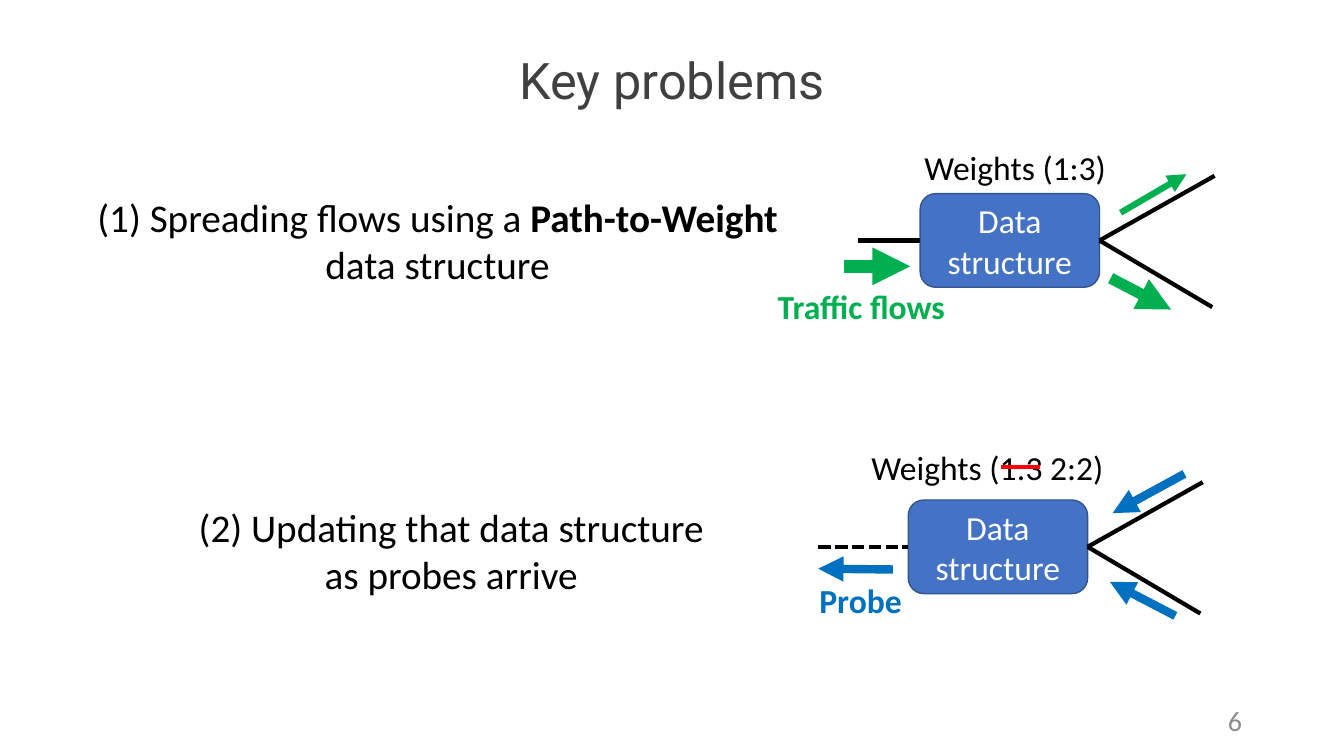
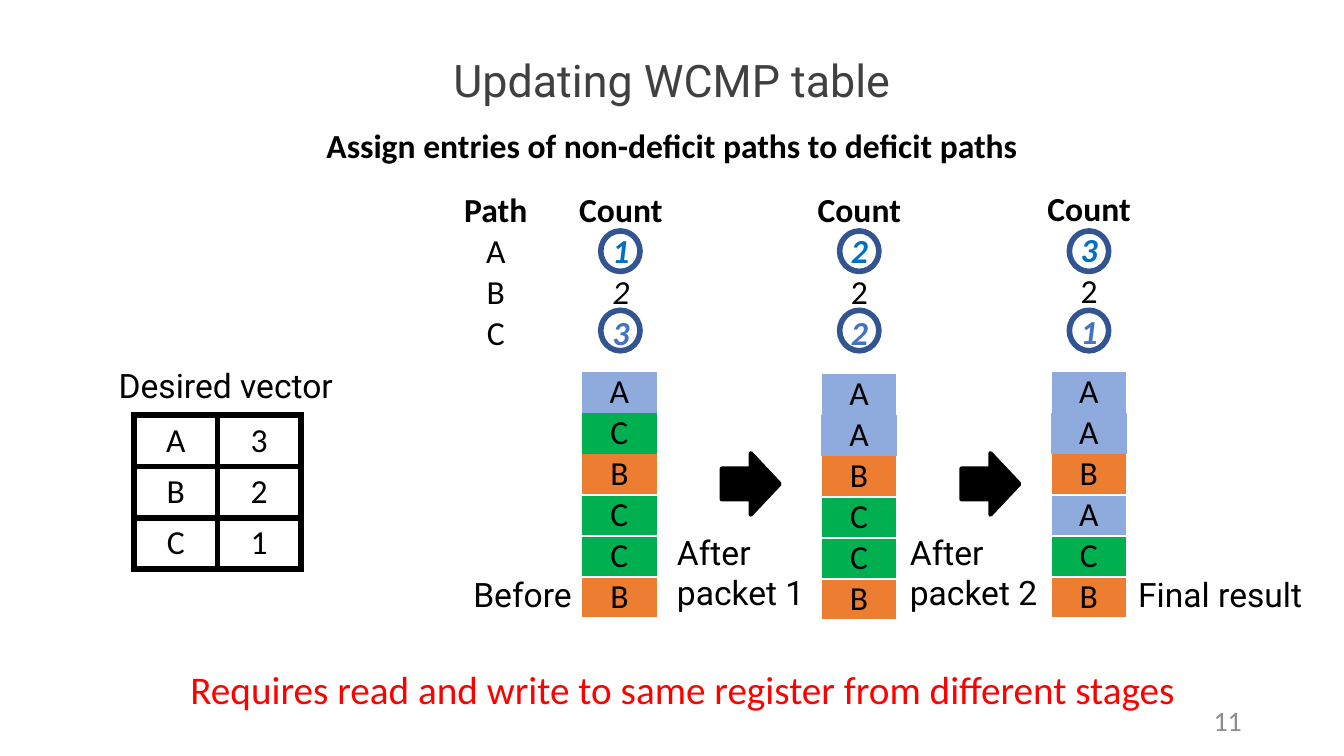
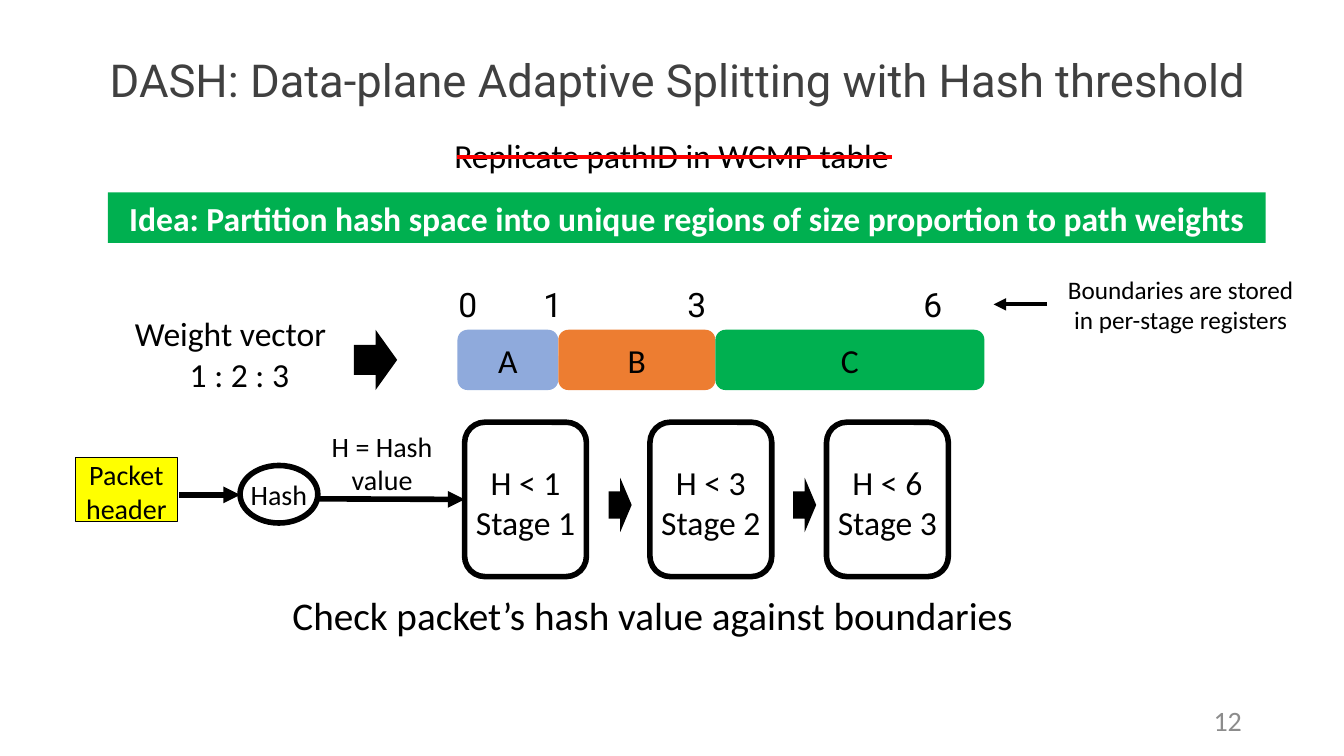
from dataclasses import dataclass

from lxml import etree
from pptx import Presentation
from pptx.dml.color import RGBColor
from pptx.enum.dml import MSO_LINE
from pptx.enum.shapes import MSO_CONNECTOR, MSO_SHAPE
from pptx.enum.text import MSO_ANCHOR, MSO_AUTO_SIZE, PP_ALIGN
from pptx.oxml.ns import qn
from pptx.util import Cm, Pt

LEFT, MID, RIGHT = PP_ALIGN.LEFT, PP_ALIGN.CENTER, PP_ALIGN.RIGHT
TOP, MIDDLE = MSO_ANCHOR.TOP, MSO_ANCHOR.MIDDLE
RECT, ROUND = MSO_SHAPE.RECTANGLE, MSO_SHAPE.ROUNDED_RECTANGLE
OVAL, ARROW = MSO_SHAPE.OVAL, MSO_SHAPE.RIGHT_ARROW
STRAIGHT, DASH = MSO_CONNECTOR.STRAIGHT, MSO_LINE.SQUARE_DOT
PLAIN = "{2D5ABB26-0587-4C30-8999-92F81FD0307C}"  # table style without grid


@dataclass(frozen=True)
class Theme:
    body: str = "Calibri"
    head: str = "Roboto"
    black: str = "000000"
    white: str = "FFFFFF"
    dark: str = "404040"
    gray: str = "8C8C8C"
    blue: str = "4472C4"
    navy: str = "325491"
    sky: str = "0070C0"
    pale: str = "8FAADC"
    green: str = "00B050"
    orange: str = "ED7D31"
    yellow: str = "FFFF00"
    red: str = "FF0000"
    huge: float = 36
    title: float = 32
    long: float = 32.4
    big: float = 28
    text: float = 24
    small: float = 20
    note: float = 18


T = Theme()
PATHS = {"A": T.pale, "B": T.orange, "C": T.green}


def rgb(code):
    return RGBColor.from_string(code)


class Deck:
    def __init__(self):
        self.prs = Presentation()
        self.prs.slide_width, self.prs.slide_height = Cm(33.87), Cm(19.05)

    def slide(self, title, number, size, left=2.33, width=29.21):
        page = self.prs.slides.add_slide(self.prs.slide_layouts[5])
        self.shapes = page.shapes
        box = page.shapes.title
        place = {"left": left, "top": 1.01, "width": width, "height": 2.16}
        for key, val in place.items():
            setattr(box, key, Cm(val))
        self.put(box.text_frame, [title], size, T.dark, MID, MIDDLE,
                 face=T.head)
        box.text_frame.paragraphs[0].line_spacing = 0.9
        self.label(23.93, 17.65, 7.62, [str(number)], T.small, T.gray, RIGHT,
                   MIDDLE, high=1.02)

    def style(self, font, size, color, face=T.body, bold=False, italic=False):
        form = {"size": Pt(size), "name": face, "bold": bold, "italic": italic}
        for key, val in form.items():
            setattr(font, key, val)
        font.color.rgb = rgb(color)

    def put(self, frame, lines, size=T.text, color=T.black, align=MID,
            anchor=TOP, wrap=True, **form):
        """Each line is a string or a list of (string, bold) runs."""
        layout = {"word_wrap": wrap, "vertical_anchor": anchor,
                  "auto_size": MSO_AUTO_SIZE.NONE}
        for key, val in layout.items():
            setattr(frame, key, val)
        for i, line in enumerate(lines):
            para = frame.add_paragraph() if i else frame.paragraphs[0]
            para.alignment = align
            runs = [(line, form.get("bold", False))] if isinstance(line, str) else line
            for words, bold in runs:
                run = para.add_run()
                run.text = words
                self.style(run.font, size, color, **{**form, "bold": bold})

    def label(self, x, y, wide, lines, size=T.text, color=T.black, align=MID,
              anchor=TOP, high=None, **form):
        high = high or 0.25 + 1.03 * len(lines) * size / T.text
        box = self.shapes.add_textbox(Cm(x), Cm(y), Cm(wide), Cm(high))
        self.put(box.text_frame, lines, size, color, align, anchor, **form)
        return box

    def shape(self, kind, x, y, wide, high, fill=None, line=None, weight=1,
              lines=(), inset=None, **form):
        item = self.shapes.add_shape(kind, Cm(x), Cm(y), Cm(wide), Cm(high))
        item.shadow.inherit = False
        if fill:
            item.fill.solid()
            item.fill.fore_color.rgb = rgb(fill)
        else:
            item.fill.background()
        if line:
            item.line.color.rgb = rgb(line)
            item.line.width = Pt(weight)
        else:
            item.line.fill.background()
        if inset is not None:
            frame = item.text_frame
            for side in ("left", "top", "right", "bottom"):
                gap = inset if side == "top" else 0
                setattr(frame, "margin_" + side, Cm(gap))
        if lines:
            self.put(item.text_frame, lines, anchor=MIDDLE, **form)
        return item

    def line(self, x1, y1, x2, y2, color=T.black, weight=3, tip=False,
             dash=None, start=None, end=None):
        wire = self.shapes.add_connector(STRAIGHT, Cm(x1), Cm(y1), Cm(x2), Cm(y2))
        if start:
            wire.begin_connect(*start)
        if end:
            wire.end_connect(*end)
        wire.line.color.rgb = rgb(color)
        wire.line.width = Pt(weight)
        if dash:
            wire.line.dash_style = dash
        props = wire._element.spPr
        if tip:
            etree.SubElement(props.find(qn("a:ln")), qn("a:tailEnd"),
                             type="triangle")
        etree.SubElement(props, qn("a:effectLst"))

    def edge(self, cell, sides, color, weight):
        props = cell._tc.get_or_add_tcPr()
        for side in sides:
            ln = etree.SubElement(props, qn("a:ln" + side),
                                  w=str(int(Pt(weight))))
            fill = etree.SubElement(ln, qn("a:solidFill"))
            etree.SubElement(fill, qn("a:srgbClr"), val=color)

    def table(self, x, y, wide, high, rows, look, inset=0):
        """look(row, col, text) gives fill, borders and font of a cell."""
        count, cols = len(rows), len(rows[0])
        grid = self.shapes.add_table(count, cols, Cm(x), Cm(y), Cm(wide * cols),
                                     Cm(high * count)).table
        grid.first_row = grid.horz_banding = False
        grid._tbl.tblPr.find(qn("a:tableStyleId")).text = PLAIN
        for r, row in enumerate(rows):
            for c, words in enumerate(row):
                cell = grid.cell(r, c)
                fill, border, form = look(r, c, words)
                for side in ("left", "top", "right", "bottom"):
                    setattr(cell, "margin_" + side, Cm(inset))
                self.edge(cell, *border)
                if fill:
                    cell.fill.solid()
                    cell.fill.fore_color.rgb = rgb(fill)
                else:
                    cell.fill.background()
                para = cell.text_frame.paragraphs[0]
                para.alignment = MID
                run = para.add_run()
                run.text = words
                self.style(run.font, T.text, **{"color": T.black, **form})

    def node(self, x, y):
        """Data structure box with its fork of two outgoing links."""
        box = self.shape(ROUND, x, y, 4.52, 2.36, T.blue, T.navy, 1,
                         ["Data structure"], color=T.white)
        tip, mid = x + 4.52, y + 1.18
        for dx, dy in ((2.9, -1.63), (2.84, 1.68)):
            self.line(tip, mid, tip + dx, mid + dy, start=(box, 3))
        return box


# Cell looks
def count_look(row, col, words):
    form = {"bold": row == 0}
    if row in (1, 3) and words.isdigit():
        form = {"bold": True, "italic": True,
                "color": T.sky if row == 1 else T.blue}
    return None, ("", T.white, 1), form


def first_look(row, col, words):
    fill, border, form = count_look(row, col, words)
    return fill, border, {**form, "italic": col == 1 and row > 0}


def stack_look(row, col, words):
    sides = {0: "LRT", 1: "", 2: "LRB"}.get(row, "LRTB")
    return PATHS[words], (sides, T.white, 1), {}


def grid_look(row, col, words):
    return None, ("LRTB", T.black, 4.5), {}


def problems(deck):
    deck.slide("Key problems", 6, T.huge)
    # Spreading flows
    deck.label(2.06, 4.75, 17.93, [[("(1) Spreading flows using a ", False),
                                    ("Path-to-Weight", True),
                                    (" data structure", False)]],
               T.big, high=2.64)
    box = deck.node(23.19, 4.88)
    deck.line(21.62, 6.06, 23.19, 6.06, end=(box, 1))
    deck.label(21.84, 3.58, 7.49, ["Weights (1:3)"])
    for *ends, weight in ((28.24, 5.36, 29.9, 4.39, 4.5),
                          (21.26, 6.71, 22.94, 6.71, 9),
                          (27.99, 7.01, 29.51, 7.8, 8)):
        deck.line(*ends, T.green, weight, tip=True)
    deck.label(19.35, 7.09, 4.8, ["Traffic flows"], color=T.green, align=LEFT,
               bold=True)
    # Updating on probes
    deck.label(2.95, 12.55, 16.84, ["(2) Updating that data structure",
                                    "as probes arrive"], T.big)
    box = deck.node(22.89, 12.6)
    deck.line(20.62, 13.78, 22.89, 13.78, dash=DASH, end=(box, 1))
    deck.label(20.73, 11.13, 8.31, ["Weights (1:3 2:2)"])
    deck.line(25.22, 11.76, 26.21, 11.76, T.red)
    for ends in ((29.85, 11.94, 28.04, 12.93), (29.62, 15.52, 27.97, 14.66),
                 (22.5, 14.35, 20.62, 14.33)):
        deck.line(*ends, T.sky, 6, tip=True)
    deck.label(20.4, 14.5, 3.3, ["Probe"], color=T.sky, align=LEFT, bold=True)


def update(deck):
    deck.slide("Updating WCMP table", 11, T.title)
    deck.label(2.33, 3.02, 29.21,
               ["Assign entries of non-deficit paths to deficit paths"],
               bold=True)
    deck.label(4.55, 16.64, 25.81,
               ["Requires read and write to same register from different stages"],
               T.big, T.red, LEFT)
    # Path counts
    first = [("Path", "Count"), ("A", "1"), ("B", "2"), ("C", "3")]
    deck.table(10.92, 4.8, 3.15, 1.02, first, first_look)
    for x, y, nums in ((20.5, 4.8, "222"), (26.29, 4.78, "321")):
        deck.table(x, y, 2.31, 1.02, [["Count"], *nums], count_look)
    for x in (15.14, 21.16, 26.95):
        for y in (5.82, 7.82):
            deck.shape(OVAL, x, y, 0.99, 1.02, line=T.navy, weight=4)
    # Table states
    for x, y, state in ((14.66, 9.37, "ACBCCB"), (20.7, 9.42, "AABCCB"),
                        (26.49, 9.37, "AABACB")):
        deck.table(x, y, 1.9, 1.02, list(state), stack_look)
    for x in (18.19, 24.23):
        deck.shape(ARROW, x, 11.42, 1.46, 1.55, T.black, T.black, 3)
    for x, y, wide, lines, align in (
            (11.46, 14.33, 3.42, ["Before"], MID),
            (16.81, 13.28, 4, ["After", "packet 1"], LEFT),
            (22.68, 13.28, 4, ["After", "packet 2"], LEFT),
            (28.2, 14.33, 5.1, ["Final result"], MID),
            (2.74, 9.07, 6.5, ["Desired vector"], LEFT)):
        deck.label(x, y, wide, lines, align=align, face=T.head)
    # Desired vector
    deck.table(3.38, 10.46, 2.1, 1.27, ["A3", "B2", "C1"], grid_look, 0.13)


def split(deck):
    deck.slide("DASH: Data-plane Adaptive Splitting with Hash threshold", 12,
               T.long, 1.47, 31.22)
    deck.label(8.05, 3.28, 17.75, ["Replicate pathID in WCMP table"])
    deck.line(11.51, 3.96, 22.48, 3.96, T.red)
    deck.shape(RECT, 2.72, 4.85, 29.18, 1.27, T.green, lines=[
        "Idea: Partition hash space into unique regions of size proportion"
        " to path weights"], color=T.white, bold=True)
    # Hash space
    box = deck.label(3.15, 7.77, 5.77, ["Weight vector", "1 : 2 : 3"])
    box.text_frame.paragraphs[0].alignment = LEFT
    deck.shape(ARROW, 8.92, 8.31, 1.09, 1.52, T.black)
    x = 11.53
    for name, wide in (("A", 2.54), ("B", 3.96), ("C", 6.78)):
        deck.shape(ROUND, x, 8.31, wide, 1.52, PATHS[name], lines=[name])
        x += wide
    for mark, mid in (("0", 11.79), ("1", 13.93), ("3", 17.56), ("6", 23.51)):
        deck.label(mid - 0.75, 7.04, 1.5, [mark], face=T.head)
    deck.line(26.39, 7.67, 25.04, 7.67, tip=True)
    deck.label(26.39, 6.78, 6.73, ["Boundaries are stored",
                                   "in per-stage registers"], T.note)
    # Hash check stages
    stages = [deck.shape(ROUND, x, 10.64, 3.07, 3.89, line=T.black, weight=4,
                         lines=[f"H < {bound}", f"Stage {i}"], inset=0.15)
              for i, (x, bound) in enumerate(
                  ((11.71, 1), (16.38, 3), (20.83, 6)), 1)]
    for x in (15.34, 19.99):
        deck.shape(ARROW, x, 12.04, 0.58, 1.37, T.black)
    deck.shape(RECT, 1.9, 11.53, 2.57, 1.6, T.yellow, T.black, 0.5,
               ["Packet", "header"], 0.1, size=T.small)
    deck.shape(OVAL, 6.05, 11.73, 1.96, 1.45, None, T.black, 4, ["Hash"], 0,
               size=T.small, wrap=False)
    deck.line(4.52, 12.47, 6.05, 12.47, weight=4, tip=True)
    deck.line(8.03, 12.57, 11.71, 12.58, weight=4, tip=True, end=(stages[0], 1))
    deck.label(7.93, 10.69, 3.4, ["H = Hash", "value"], T.small)
    deck.label(7.01, 14.78, 18.87,
               ["Check packet’s hash value against boundaries"], T.big)


def main():
    deck = Deck()
    for build in (problems, update, split):
        build(deck)
    deck.prs.save("out.pptx")


if __name__ == "__main__":
    main()
